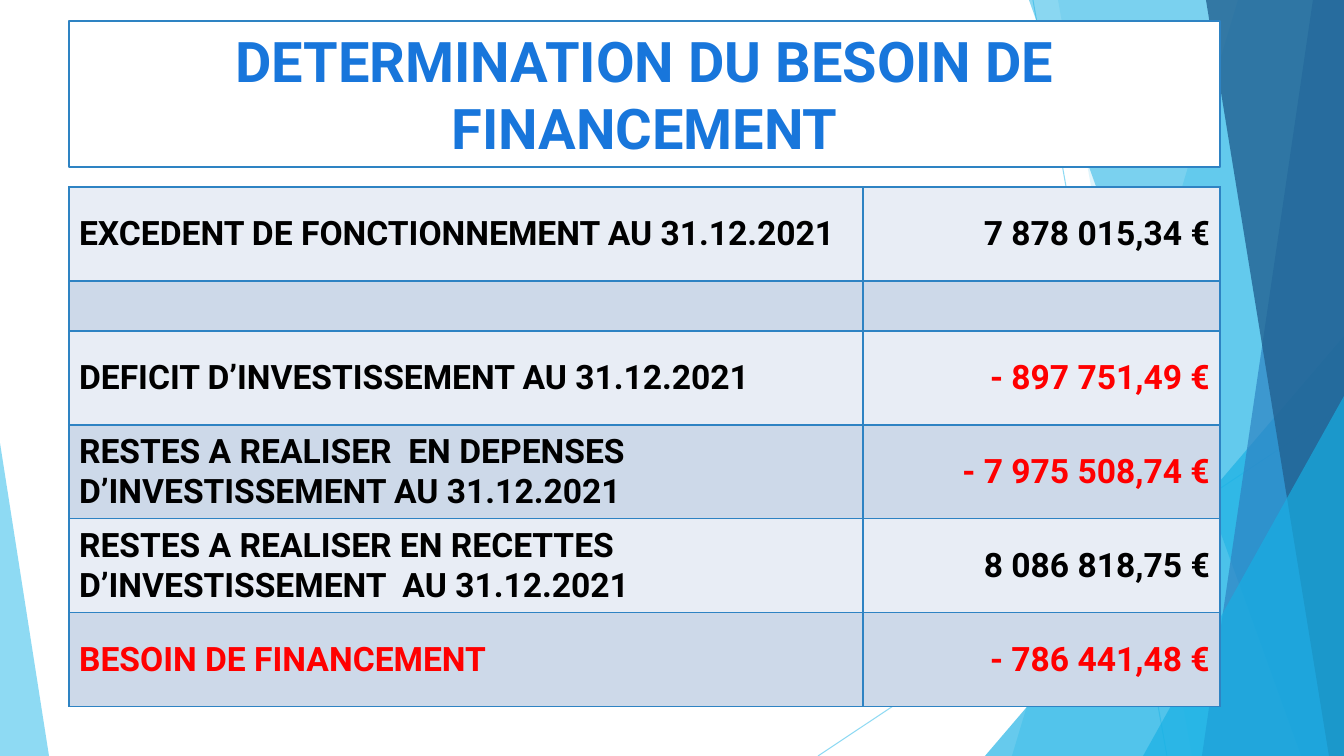
from lxml.etree import SubElement
from pptx import Presentation
from pptx.dml.color import RGBColor
from pptx.enum.shapes import MSO_CONNECTOR, MSO_SHAPE
from pptx.enum.text import MSO_ANCHOR as ANCHOR, MSO_AUTO_SIZE, PP_ALIGN as ALIGN
from pptx.oxml.ns import qn
from pptx.util import Pt

PX = 914400 / 100.8  # EMU per px
W, H = 1344, 756
FONT = "Roboto"
COLORS = {
    "white": "FFFFFF", "black": "000000", "red": "FF0000", "title": "1876DB",
    "sky": "5FCBEF", "cyan": "17B0E4", "blue": "2E83C3", "navy": "226292",
    "light": "E8EDF5", "dark": "CDD9E9",
}


def rgb(name):
    return RGBColor.from_string(COLORS[name])


def set_alpha(element, percent):
    for clr in element.iter(qn("a:srgbClr")):
        SubElement(clr, qn("a:alpha"), val=str(percent * 1000))


prs = Presentation()
prs.slide_width, prs.slide_height = round(W * PX), round(H * PX)
s = prs.slides.add_slide(prs.slide_layouts[5])

# Thin background lines
for ends in [(1033, 0, 1167, H), (W, 406, 818, H)]:
    line = s.shapes.add_connector(MSO_CONNECTOR.STRAIGHT, *[round(v * PX) for v in ends])
    line.line.color.rgb = rgb("sky")
    line.line.width = Pt(0.75)
    set_alpha(line._element, 70)
    SubElement(line._element.spPr, qn("a:effectLst"))

# Translucent facets: bands give top-left x, right edge and bottom-left x,
# triangles give left, top, width, height and apex position
facets = [
    ("band", (1238, 1012), "sky", 36),
    ("band", (1058, 1192), "sky", 20),
    ("triangle", (985, 336, 359, 420, 1), "cyan", 66),
    ("band", (1029, 1301), "cyan", 50),
    ("band", (1313, 1202), "blue", 70),
    ("band", (1206, 1329), "navy", 80),
    ("triangle", (1143, 396, 201, 360, 1), "cyan", 66),
    ("triangle", (0, 443, 49, 313, 0), "sky", 70),
]
for kind, geometry, color, alpha in facets:
    if kind == "band":
        top_x, bottom_x = geometry
        builder = s.shapes.build_freeform(top_x, 0, scale=PX)
        builder.add_line_segments([(W, 0), (W, H), (bottom_x, H)], close=True)
        sp = builder.convert_to_shape()
    else:
        *box, apex = geometry
        sp = s.shapes.add_shape(MSO_SHAPE.ISOSCELES_TRIANGLE, *[round(v * PX) for v in box])
        sp.adjustments[0] = apex
    sp.shadow.inherit = False
    sp.fill.solid()
    sp.fill.fore_color.rgb = rgb(color)
    sp.line.fill.background()
    set_alpha(sp._element, alpha)

# Title, raised above the background
title = s.shapes.title
s.shapes._spTree.append(title._element)
title.left, title.top, title.width, title.height = [round(v * PX) for v in (69, 21, 1151, 146)]
title.fill.solid()
title.fill.fore_color.rgb = rgb("white")
title.line.color.rgb = rgb("blue")
title.line.width = Pt(1.5)
tf = title.text_frame
tf.text = "DETERMINATION DU BESOIN DE FINANCEMENT"
tf.word_wrap = True
tf.auto_size = MSO_AUTO_SIZE.NONE
tf.vertical_anchor = ANCHOR.MIDDLE
p = tf.paragraphs[0]
p.alignment = ALIGN.CENTER
p.font.name, p.font.size, p.font.bold = FONT, Pt(40), True
p.font.color.rgb = rgb("title")

# Financing table: label, amount, label colour, amount colour
rows = [
    ("EXCEDENT DE FONCTIONNEMENT AU 31.12.2021", "7 878 015,34 €", "black", "black"),
    ("", "", "black", "black"),
    ("DEFICIT D’INVESTISSEMENT AU 31.12.2021", "- 897 751,49 €", "black", "red"),
    ("RESTES A REALISER  EN DEPENSES  D’INVESTISSEMENT AU 31.12.2021",
     "- 7 975 508,74 €", "black", "red"),
    ("RESTES A REALISER EN RECETTES  D’INVESTISSEMENT  AU 31.12.2021",
     "8 086 818,75 €", "black", "black"),
    ("BESOIN DE FINANCEMENT", "- 786 441,48 €", "red", "red"),
]
heights = [94 if label else 50 for label, *_ in rows]
box = (69, 187, 1151, sum(heights))
table = s.shapes.add_table(len(rows), 2, *[round(v * PX) for v in box]).table
for column, width in zip(table.columns, (794, 357)):
    column.width = round(width * PX)

for i, (label, amount, *text_colors) in enumerate(rows):
    table.rows[i].height = round(heights[i] * PX)
    for j, text in enumerate((label, amount)):
        cell = table.cell(i, j)
        cell.text = text
        cell.vertical_anchor = ANCHOR.MIDDLE
        p = cell.text_frame.paragraphs[0]
        p.alignment = (ALIGN.LEFT, ALIGN.RIGHT)[j]
        p.font.name, p.font.size, p.font.bold = FONT, Pt(24), True
        p.font.color.rgb = rgb(text_colors[j])
        # Borders come before the fill in the cell properties
        tcPr = cell._tc.get_or_add_tcPr()
        for side in ("lnL", "lnR", "lnT", "lnB"):
            ln = SubElement(tcPr, qn(f"a:{side}"), w=str(Pt(1)))
            fill = SubElement(ln, qn("a:solidFill"))
            SubElement(fill, qn("a:srgbClr"), val=COLORS["blue"])
        cell.fill.solid()
        cell.fill.fore_color.rgb = rgb(("light", "dark")[i % 2])

prs.save("out.pptx")
